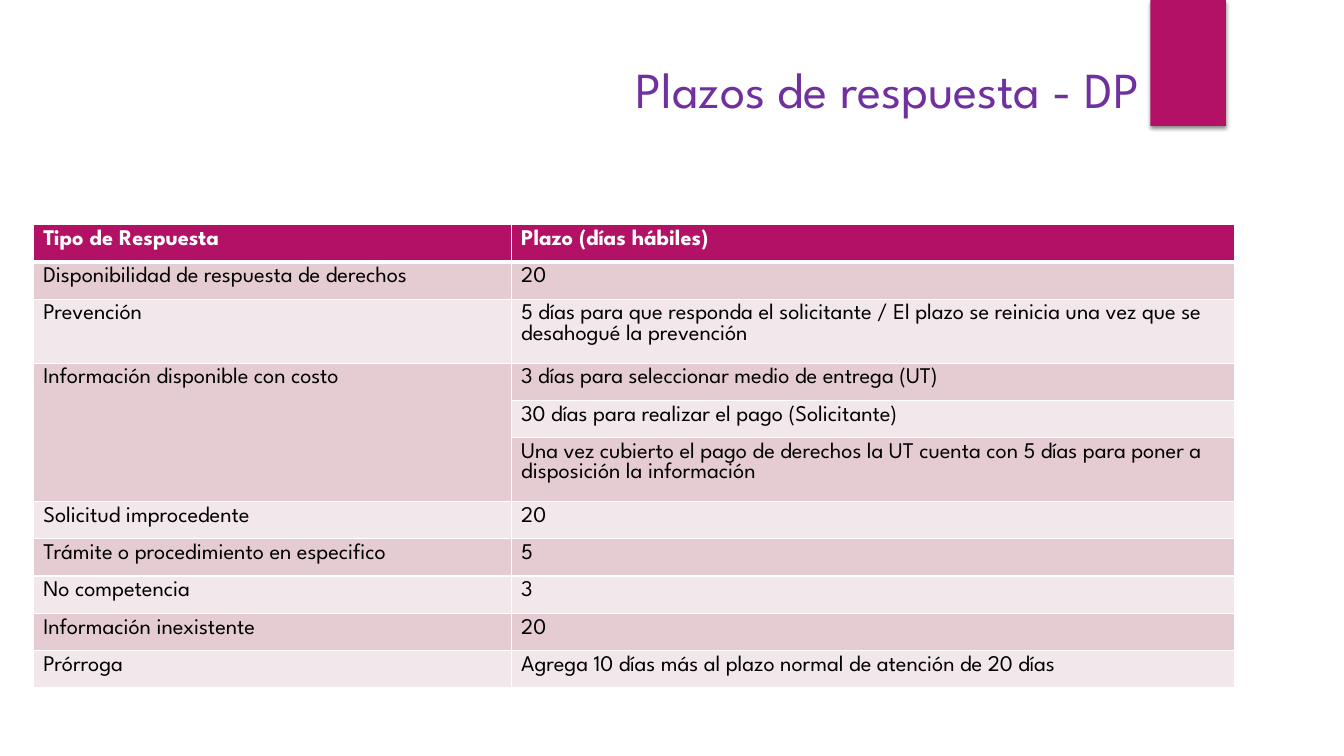
"""Build the slide with response deadlines for data protection requests."""
from dataclasses import dataclass

from lxml import etree
from pptx import Presentation
from pptx.dml.color import RGBColor
from pptx.enum.shapes import MSO_SHAPE
from pptx.enum.text import MSO_ANCHOR, PP_ALIGN
from pptx.oxml import parse_xml
from pptx.oxml.ns import nsdecls, qn
from pptx.util import Inches, Pt

RECTANGLE = MSO_SHAPE.RECTANGLE
MIDDLE = MSO_ANCHOR.MIDDLE
LEFT, RIGHT = PP_ALIGN.LEFT, PP_ALIGN.RIGHT

TITLE = "Plazos de respuesta - DP"
HEADER = ("Tipo de Respuesta", "Plazo (días hábiles)")
DEADLINES = [
    ("Disponibilidad de respuesta de derechos", ["20"]),
    ("Prevención", ["5 días para que responda el solicitante / El plazo se reinicia "
                    "una vez que se desahogué la prevención"]),
    ("Información disponible con costo", [
        "3 días para seleccionar medio de entrega (UT)",
        "30 días para realizar el pago (Solicitante)",
        "Una vez cubierto el pago de derechos la UT cuenta con 5 días para poner "
        "a disposición la información",
    ]),
    ("Solicitud improcedente", ["20"]),
    ("Trámite o procedimiento en especifico", ["5"]),
    ("No competencia", ["3"]),
    ("Información inexistente", ["20"]),
    ("Prórroga", ["Agrega 10 días más al plazo normal de atención de 20 días"]),
]

TAB_BOX = (11.41, 0, 0.75, 1.25)
TITLE_BOX = (1.82, 0.49, 9.58, 0.77)
TABLE_LEFT, TABLE_TOP = 0.33, 2.23
COLUMN_WIDTHS = (4.74, 7.18)
ROW_HEIGHT = 0.37


@dataclass(frozen=True)
class Theme:
    font: str = "League Spartan"
    title_size: int = 36
    cell_size: int = 16
    title: str = "7030A0"
    accent: str = "B31166"
    bands: tuple = ("F2E7EA", "E5CCD3")
    text: str = "000000"
    light: str = "FFFFFF"
    thin: int = 1
    thick: int = 3


THEME = Theme()


def rgb(code):
    return RGBColor.from_string(code)


def write(frame, text, size, color, bold=False, align=LEFT):
    para = frame.paragraphs[0]
    para.alignment = align
    span = para.add_run()
    span.text = text
    span.font.name = THEME.font
    span.font.size = Pt(size)
    span.font.bold = bold
    span.font.color.rgb = rgb(color)


def add_tab(page):
    tab = page.shapes.add_shape(RECTANGLE, *map(Inches, TAB_BOX))
    tab.fill.solid()
    tab.fill.fore_color.rgb = rgb(THEME.accent)
    tab.line.fill.background()
    tab.shadow.inherit = False
    effects = tab.element.spPr.find(qn("a:effectLst"))
    effects.append(parse_xml(
        f'<a:outerShdw {nsdecls("a")} blurRad="{Pt(3)}" dist="{Pt(2)}" dir="5400000" '
        f'rotWithShape="0"><a:srgbClr val="{THEME.text}"><a:alpha val="45000"/>'
        '</a:srgbClr></a:outerShdw>'))


def add_title(page):
    box = page.shapes.add_textbox(*map(Inches, TITLE_BOX))
    box.text_frame.word_wrap = True
    box.text_frame.vertical_anchor = MIDDLE
    write(box.text_frame, TITLE, THEME.title_size, THEME.title, align=RIGHT)


def set_borders(cell, top, bottom):
    properties = cell._tc.get_or_add_tcPr()
    widths = {"lnL": THEME.thin, "lnR": THEME.thin, "lnT": top, "lnB": bottom}
    for side, width in widths.items():
        line = etree.SubElement(properties, qn(f"a:{side}"), w=str(Pt(width)))
        fill = etree.SubElement(line, qn("a:solidFill"))
        etree.SubElement(fill, qn("a:srgbClr"), val=THEME.light)


def add_deadlines(page):
    rows = [HEADER]
    merges = []
    for kind, terms in DEADLINES:
        if len(terms) > 1:
            merges.append((len(rows), len(rows) + len(terms) - 1))
        rows += [(kind if index == 0 else "", term) for index, term in enumerate(terms)]

    frame = page.shapes.add_table(
        len(rows), len(COLUMN_WIDTHS), Inches(TABLE_LEFT), Inches(TABLE_TOP),
        Inches(sum(COLUMN_WIDTHS)), Inches(ROW_HEIGHT * len(rows)))
    table = frame.table
    for column, width in zip(table.columns, COLUMN_WIDTHS):
        column.width = Inches(width)

    for number, texts in enumerate(rows):
        is_header = number == 0
        table.rows[number].height = Inches(ROW_HEIGHT)
        for position, text in enumerate(texts):
            cell = table.cell(number, position)
            set_borders(cell, THEME.thick if number == 1 else THEME.thin,
                        THEME.thick if is_header else THEME.thin)
            cell.fill.solid()
            cell.fill.fore_color.rgb = rgb(THEME.accent if is_header else THEME.bands[number % 2])
            if text:
                write(cell.text_frame, text, THEME.cell_size,
                      THEME.light if is_header else THEME.text, bold=is_header)
    for first, last in merges:
        table.cell(first, 0).merge(table.cell(last, 0))


def main():
    deck = Presentation()
    deck.slide_width, deck.slide_height = Inches(13.33), Inches(7.5)
    page = deck.slides.add_slide(deck.slide_layouts[6])
    add_tab(page)
    add_title(page)
    add_deadlines(page)
    deck.save("out.pptx")


if __name__ == "__main__":
    main()
